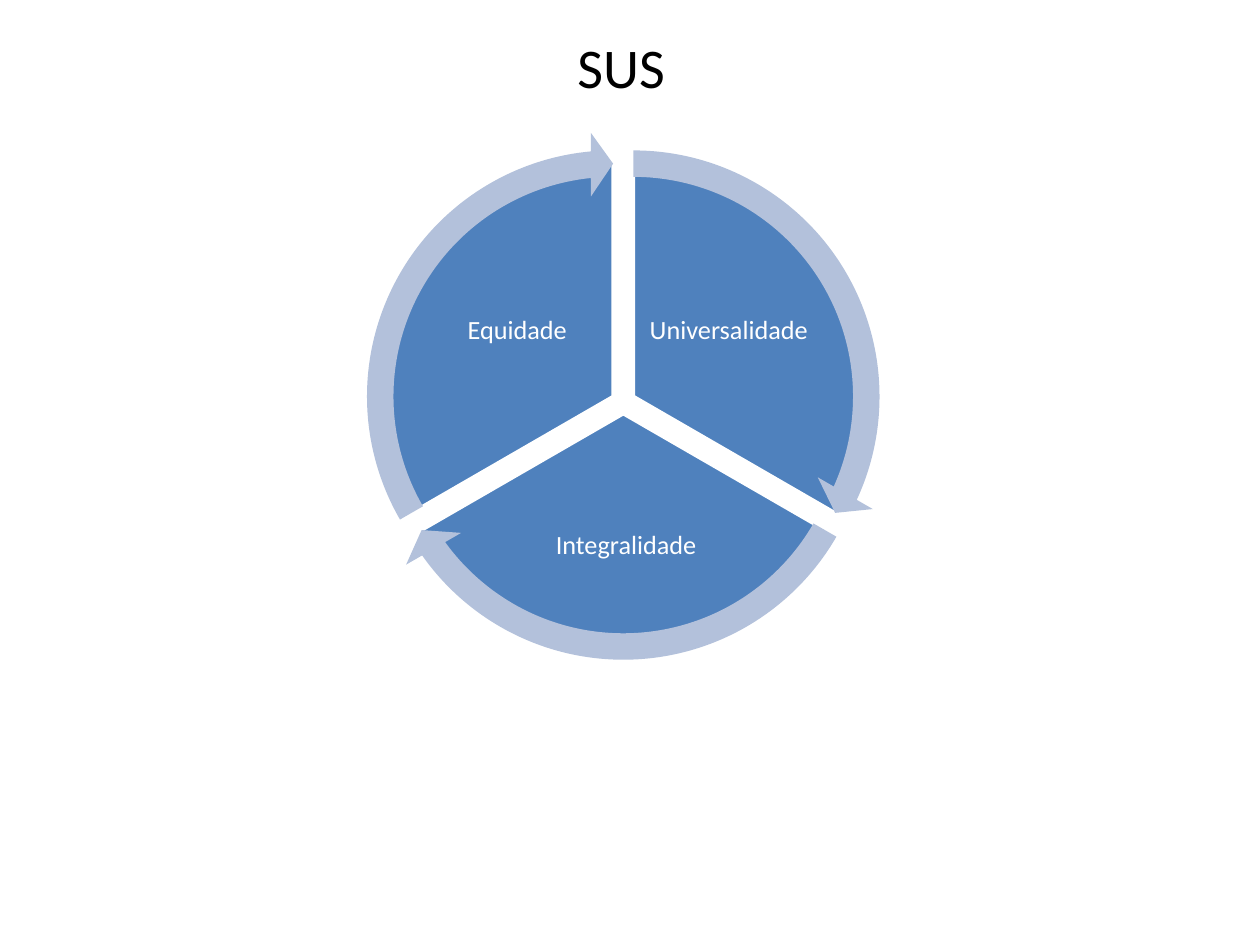
"""Build the SUS slide: a cycle of three principles."""
from pptx import Presentation
from pptx.dml.color import RGBColor
from pptx.enum.shapes import MSO_SHAPE
from pptx.enum.text import MSO_ANCHOR, PP_ALIGN
from pptx.util import Pt

PIE, ARROW = MSO_SHAPE.PIE, MSO_SHAPE.CIRCULAR_ARROW
CENTER = PP_ALIGN.CENTER
TOP, MIDDLE = MSO_ANCHOR.TOP, MSO_ANCHOR.MIDDLE
BLUE = RGBColor(0x4F, 0x81, 0xBD)
PALE_BLUE = RGBColor(0xB3, 0xC1, 0xDB)
WHITE = RGBColor(0xFF, 0xFF, 0xFF)
BLACK = RGBColor(0, 0, 0)

TITLE = "SUS"
TITLE_AREA = (31, 15, 648, 356.4)
# label, centre, start and end in degrees, label area
SECTORS = [
    ("Universalidade", (362, 226.6), (270, 30), (368.6, 149, 95.8, 80)),
    ("Integralidade", (356.2, 236.4), (30, 150), (285.8, 276.5, 144, 70.6)),
    ("Equidade", (350.4, 226.6), (150, 270), (247.7, 149, 95.8, 80)),
]
PIE_SIZE, ARROW_SIZE = 268.6, 302.4
ARROW_WIDTH, HEAD_WIDTH = 0.05, 0.06
HEAD_DEGREES = 5.46
ADJUSTMENT_PER_DEGREE = 0.6


def add_round(page, kind, center, size, color, adjustments):
    left, top = (middle - size / 2 for middle in center)
    shape = page.shapes.add_shape(kind, Pt(left), Pt(top), Pt(size), Pt(size))
    shape.shadow.inherit = False
    shape.fill.solid()
    shape.fill.fore_color.rgb = color
    shape.line.fill.background()
    for index, value in enumerate(adjustments):
        shape.adjustments[index] = value
    return shape


def add_text(page, text, area, size, color, anchor, inset):
    box = page.shapes.add_textbox(*map(Pt, area))
    frame = box.text_frame
    frame.word_wrap = True
    frame.vertical_anchor = anchor
    if inset is not None:
        frame.margin_left = frame.margin_right = Pt(inset)
        frame.margin_top = frame.margin_bottom = Pt(inset)
    para = frame.paragraphs[0]
    para.text = text
    para.alignment = CENTER
    para.font.name = "Calibri"
    para.font.size = Pt(size)
    para.font.color.rgb = color
    return para


def main():
    deck = Presentation()
    deck.slide_width, deck.slide_height = Pt(720), Pt(540)
    page = deck.slides.add_slide(deck.slide_layouts[6])
    add_text(page, TITLE, TITLE_AREA, 32, BLACK, TOP, None)

    for label, center, degrees, area in SECTORS:
        angles = [angle * ADJUSTMENT_PER_DEGREE for angle in degrees]
        pie = add_round(page, PIE, center, PIE_SIZE, BLUE, angles)
        pie.line.color.rgb = WHITE
        pie.line.width = Pt(2)
        para = add_text(page, label, area, 15, WHITE, MIDDLE, 1.5)
        para.line_spacing = 0.9

    head = HEAD_DEGREES * ADJUSTMENT_PER_DEGREE
    for _, center, degrees, _ in SECTORS:
        start, end = (angle * ADJUSTMENT_PER_DEGREE for angle in degrees)
        add_round(page, ARROW, center, ARROW_SIZE, PALE_BLUE,
                  (ARROW_WIDTH, head, end - head, start, HEAD_WIDTH))

    deck.save("out.pptx")


if __name__ == "__main__":
    main()
